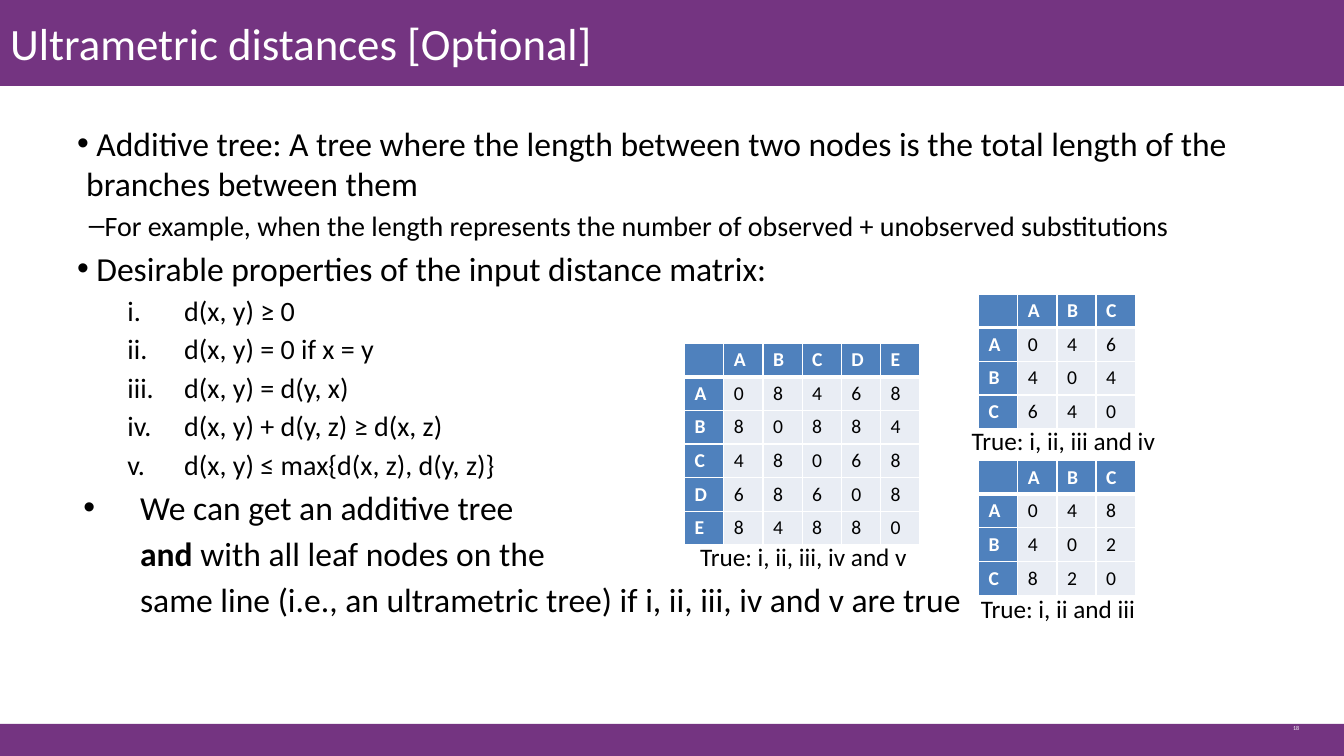
"""Builds the slide on ultrametric distances with its three distance matrices."""
from dataclasses import dataclass

from lxml import etree
from pptx import Presentation
from pptx import util as u
from pptx.dml.color import RGBColor
from pptx.enum import shapes, text
from pptx.oxml.ns import qn


@dataclass(frozen=True)
class Theme:
    font: str = "Calibri"
    purple: str = "743481"
    white: str = "FFFFFF"
    black: str = "000000"
    header: str = "4F81BD"
    cell: str = "E9EDF4"
    title: float = 32
    main: float = 24
    sub: float = 20
    caption: float = 18
    table: float = 14
    number: float = 4.3


theme = Theme()


def style(para, size, colour, bold=None):
    """Formats every run of a paragraph."""
    for span in para.runs:
        span.font.name = theme.font
        span.font.size = u.Pt(size)
        span.font.color.rgb = RGBColor.from_string(colour)
        if bold is not None:
            span.font.bold = bold


def add_label(wording, place, size, colour):
    """Adds a one-line text box."""
    box = slide.shapes.add_textbox(*map(u.Pt, place))
    box.text_frame.word_wrap = False
    box.text_frame.text = wording
    style(box.text_frame.paragraphs[0], size, colour)


deck = Presentation()
deck.slide_width, deck.slide_height = u.Pt(960), u.Pt(540)
slide = deck.slides.add_slide(deck.slide_layouts[5])

title = slide.shapes.title
title.left, title.top, title.width, title.height = map(u.Pt, (0, -0.7, 750, 62))
title.text_frame.text = "Ultrametric distances [Optional]"
title.text_frame.vertical_anchor = text.MSO_ANCHOR.MIDDLE
title.text_frame.paragraphs[0].alignment = text.PP_ALIGN.LEFT
style(title.text_frame.paragraphs[0], theme.title, theme.white)

for top, height in ((517, 23), (0, 61.3)):
    bar = slide.shapes.add_shape(
        shapes.MSO_SHAPE.RECTANGLE, 0, u.Pt(top), deck.slide_width, u.Pt(height))
    bar.shadow.inherit = False
    bar.fill.solid()
    bar.fill.fore_color.rgb = RGBColor.from_string(theme.purple)
    bar.line.fill.background()
    title._element.addprevious(bar._element)

add_label("18", (916.5, 514, 43, 24), theme.number, theme.white)

POINT, DASH, ROMAN = (6.5, -6.5, "•"), (13.5, -5, "–"), (76.5, -40.5, "roman")
WIDE_POINT, CONTINUED = (45, -40.5, "•"), (45, 0, None)
outline = (
    (POINT, theme.main, (" Additive tree: A tree where the length between two nodes "
                         "is the total length of the branches between them",)),
    (DASH, theme.sub, ("For example, when the length represents the number of "
                       "observed + unobserved substitutions",)),
    (POINT, theme.main, (" Desirable properties of the input distance matrix:",)),
    (ROMAN, theme.sub, ("d(x, y) ≥ 0",)),
    (ROMAN, theme.sub, ("d(x, y) = 0 if x = y",)),
    (ROMAN, theme.sub, ("d(x, y) = d(y, x)",)),
    (ROMAN, theme.sub, ("d(x, y) + d(y, z) ≥ d(x, z)",)),
    (ROMAN, theme.sub, ("d(x, y) ≤ max{d(x, z), d(y, z)}",)),
    (WIDE_POINT, theme.main, ("We can get an additive tree",)),
    (CONTINUED, theme.main, ("and", " with all leaf nodes on the")),
    (CONTINUED, theme.main, (
        "same line (i.e., an ultrametric tree) if i, ii, iii, iv and v are true",)),
)
body = slide.shapes.add_textbox(*map(u.Pt, (48, 84.2, 864, 398))).text_frame
body.word_wrap = True
for index, ((margin, indent, bullet), size, spans) in enumerate(outline):
    para = body.add_paragraph() if index else body.paragraphs[0]
    layout = para._p.get_or_add_pPr()
    layout.set("marL", str(u.Pt(margin)))
    layout.set("indent", str(u.Pt(indent)))
    if bullet == "roman":
        para.level = 1
        etree.SubElement(layout, qn("a:buFont"), typeface="+mj-lt")
        etree.SubElement(layout, qn("a:buAutoNum"), type="romanLcPeriod")
    elif bullet:
        para.level = int(bullet == "–")
        etree.SubElement(layout, qn("a:buFont"), typeface="Arial")
        etree.SubElement(layout, qn("a:buChar"), char=bullet)
    else:
        etree.SubElement(layout, qn("a:buNone"))
    if index:
        para.space_before = u.Pt(round(size * 0.175, 1))
    for wording in spans:
        para.add_run().text = wording
    style(para, size, theme.black)
    if len(spans) > 1:
        para.runs[0].font.bold = True

COLUMN, ROW = 28, 24
matrices = (
    (489, 245, ("08468", "80884", "48068", "68608", "84880"),
     "True: i, ii, iii, iv and v", (493, 383, 164, 29)),
    (699, 210, ("046", "404", "640"),
     "True: i, ii, iii and iv", (687, 300, 147.5, 29)),
    (699, 329, ("048", "402", "820"),
     "True: i, ii and iii", (693.5, 420, 126, 29)),
)
for left, top, distances, caption, place in matrices:
    names = "ABCDE"[:len(distances)]
    rows = [["", *names]] + [[name, *values] for name, values in zip(names, distances)]
    count = len(rows)
    grid = slide.shapes.add_table(
        count, count, *map(u.Pt, (left, top, count * COLUMN, count * ROW))).table
    grid.first_col = True
    grid.horz_banding = False
    for r, row in enumerate(rows):
        grid.rows[r].height = u.Pt(ROW)
        grid.columns[r].width = u.Pt(COLUMN)
        for c, value in enumerate(row):
            cell = grid.cell(r, c)
            heading = r == 0 or c == 0
            borders = cell._tc.get_or_add_tcPr()
            for side in "LRTB":
                width = 3 if (side, r) in (("B", 0), ("T", 1)) else 1
                line = etree.SubElement(borders, qn(f"a:ln{side}"), w=str(u.Pt(width)))
                paint = etree.SubElement(line, qn("a:solidFill"))
                etree.SubElement(paint, qn("a:srgbClr"), val=theme.white)
            cell.fill.solid()
            cell.fill.fore_color.rgb = RGBColor.from_string(
                theme.header if heading else theme.cell)
            para = cell.text_frame.paragraphs[0]
            if value:
                para.text = value
                style(para, theme.table, theme.white if heading else theme.black, heading)
            else:
                etree.SubElement(para._p, qn("a:endParaRPr"), sz=str(theme.table * 100))
    add_label(caption, place, theme.caption, theme.black)

deck.save("out.pptx")
